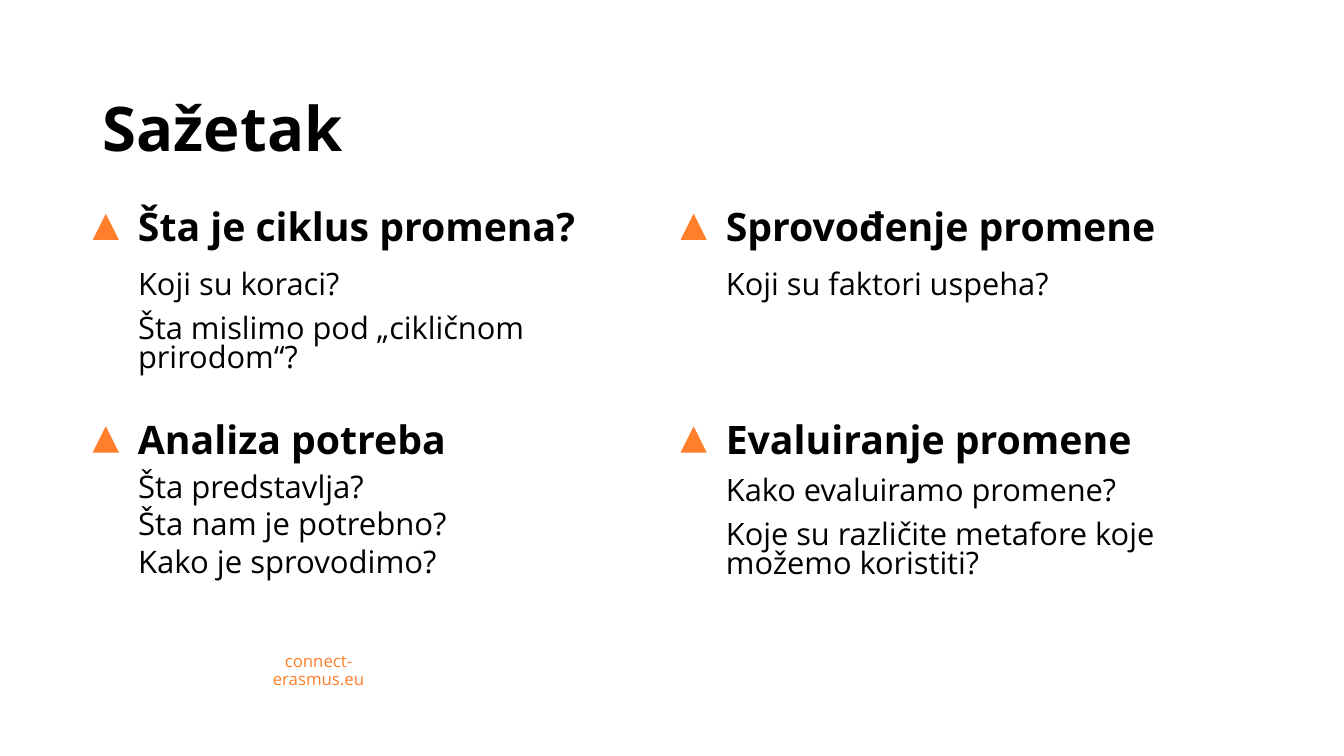
from lxml import etree
from pptx import Presentation
from pptx.dml.color import RGBColor
from pptx.enum import shapes, text
from pptx.oxml import ns
from pptx.util import Inches, Pt

TITLE = "Sažetak"
FOOTER = "connect-erasmus.eu"
# Column, row, heading, questions, size, line spacing, gap between questions
TOPICS = [
    (0, 0, "Šta je ciklus promena?",
     ["Koji su koraci?", "Šta mislimo pod „cikličnom prirodom“?"], 22, 0.8, 10),
    (0, 1, "Analiza potreba",
     ["Šta predstavlja?", "Šta nam je potrebno?", "Kako je sprovodimo?"], 22.2, 0.7, 8),
    (1, 0, "Sprovođenje promene",
     ["Koji su faktori uspeha?"], 22, 0.8, 10),
    (1, 1, "Evaluiranje promene",
     ["Kako evaluiramo promene?",
      "Koje su različite metafore koje možemo koristiti?"], 22, 0.8, 10),
]

FONT = "Open Sans"
BLACK = RGBColor(0x00, 0x00, 0x00)
ORANGE = RGBColor(0xFF, 0x7F, 0x2A)

LEFT, COLUMN_STEP = 0.92, 5.83
TEXT_INDENT, TEXT_WIDTH = 0.35, 5.31
MARKER_SIZE = 0.26
# Tops of marker, heading and questions, then height of questions, by row
ROWS = [(2.12, 2.05, 2.65, 1.32), (4.23, 4.16, 4.69, 1.25)]


def place(box, left, top, width, height):
    box.left, box.top = Inches(left), Inches(top)
    box.width, box.height = Inches(width), Inches(height)


def write(box, lines, size, spacing, gap=0, bold=False, color=BLACK,
          anchor=text.MSO_ANCHOR.TOP, align=text.PP_ALIGN.LEFT):
    frame = box.text_frame
    frame.text = "\n".join(lines)
    frame.word_wrap = True
    frame.auto_size = text.MSO_AUTO_SIZE.NONE
    frame.vertical_anchor = anchor
    for number, line in enumerate(frame.paragraphs):
        properties = line._p.get_or_add_pPr()
        properties.set("marL", "0")
        properties.set("indent", "0")
        etree.SubElement(properties, ns.qn("a:buNone"))
        line.alignment = align
        line.line_spacing = spacing
        line.space_before = Pt(gap if number else 0)
        for run in line.runs:
            run.font.name = FONT
            run.font.size = Pt(size)
            run.font.bold = bold
            run.font.color.rgb = color


deck = Presentation()
deck.slide_width, deck.slide_height = Inches(13.33), Inches(7.5)
slide = deck.slides.add_slide(deck.slide_layouts.get_by_name("Comparison"))
title, *question_lists = slide.placeholders

# Title
place(title, LEFT, 0.84, 11.5, 0.85)
write(title, [TITLE], 44, 0.9, bold=True, anchor=text.MSO_ANCHOR.BOTTOM)

# Footer address
footer = slide.shapes.add_textbox(Inches(2.28), Inches(6.51), Inches(1.76), Inches(0.3))
write(footer, [FOOTER], 12, 0.9, color=ORANGE,
      anchor=text.MSO_ANCHOR.MIDDLE, align=text.PP_ALIGN.CENTER)

# Four topics: marker, heading and questions
for questions_box, topic in zip(question_lists, TOPICS):
    column, row, heading, questions, size, spacing, gap = topic
    marker_top, heading_top, questions_top, questions_height = ROWS[row]
    marker_left = LEFT + column * COLUMN_STEP
    text_left = marker_left + TEXT_INDENT

    marker = slide.shapes.add_shape(
        shapes.MSO_SHAPE.ISOSCELES_TRIANGLE, Inches(marker_left), Inches(marker_top),
        Inches(MARKER_SIZE), Inches(MARKER_SIZE))
    marker.shadow.inherit = False
    marker.fill.solid()
    marker.fill.fore_color.rgb = ORANGE
    marker.line.fill.background()

    heading_box = slide.shapes.add_textbox(
        Inches(text_left), Inches(heading_top), Inches(TEXT_WIDTH), Inches(0.51))
    write(heading_box, [heading], 28, 0.8, bold=True)

    place(questions_box, text_left, questions_top, TEXT_WIDTH, questions_height)
    write(questions_box, questions, size, spacing, gap)

deck.save("out.pptx")
